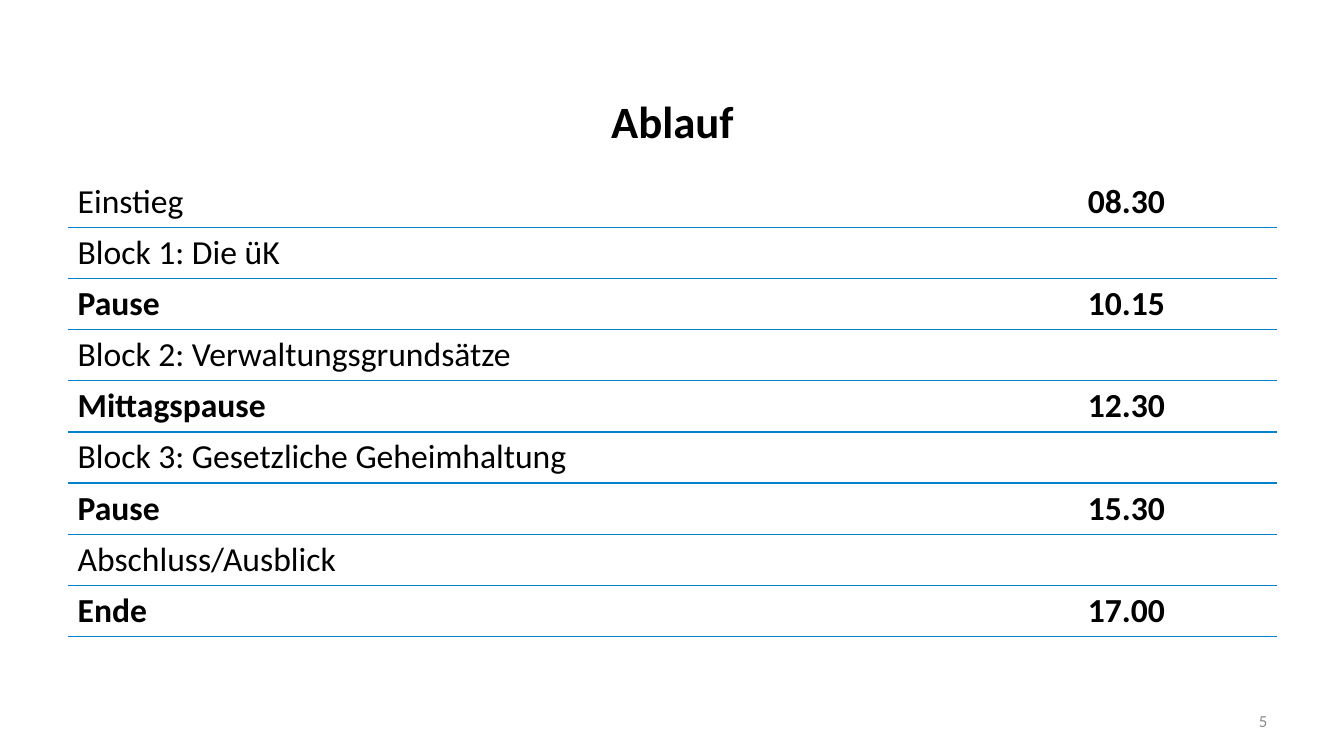
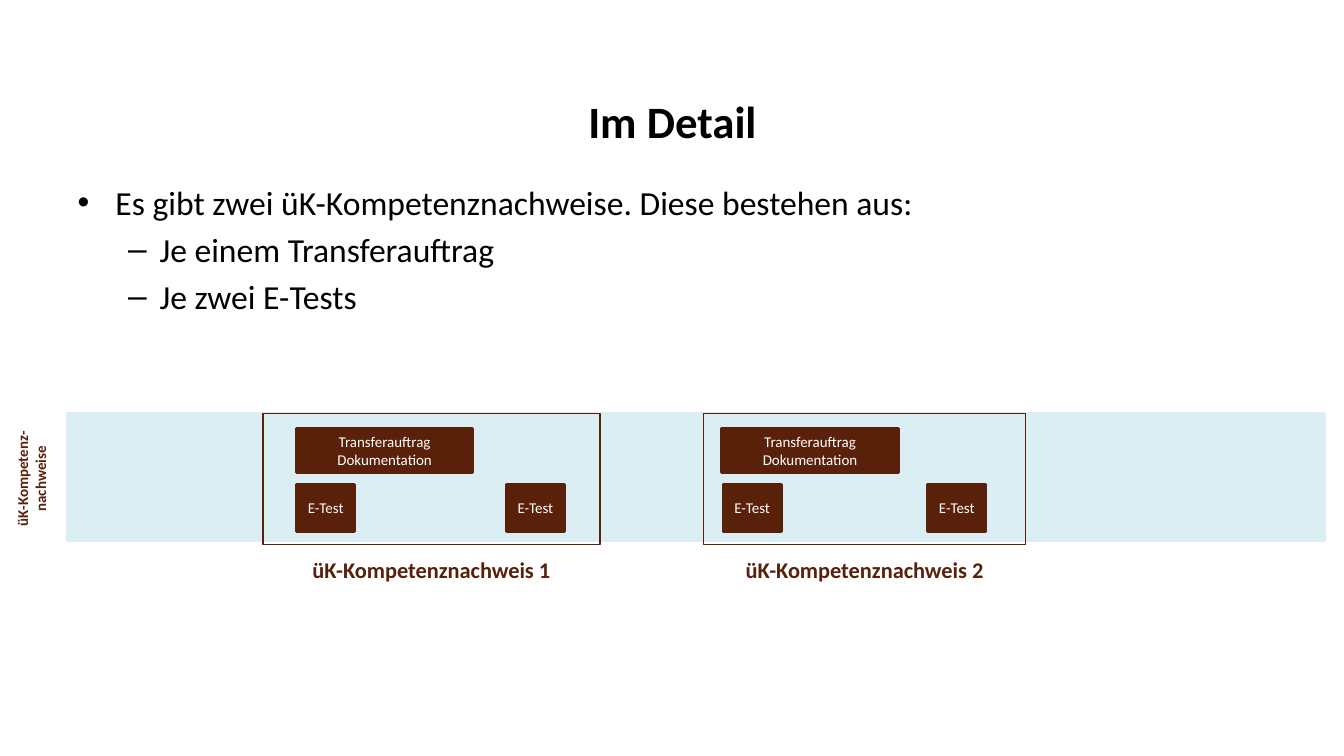
from lxml.etree import SubElement
from pptx import Presentation
from pptx.dml.color import RGBColor
from pptx.enum.shapes import MSO_SHAPE
from pptx.enum.text import MSO_ANCHOR, PP_ALIGN
from pptx.oxml.ns import qn
from pptx.util import Inches, Pt

BLACK = RGBColor(0x00, 0x00, 0x00)
WHITE = RGBColor(0xFF, 0xFF, 0xFF)
GREY = RGBColor(0x8C, 0x8C, 0x8C)
BLUE = RGBColor(0x00, 0x82, 0xCA)
PALE_BLUE = RGBColor(0xDB, 0xEE, 0xF4)
BROWN = RGBColor(0x59, 0x20, 0x0A)

FONT = "Calibri"
NO_STYLE_NO_GRID = "{2D5ABB26-0587-4C30-8999-92F81FD0307C}"
TITLE_AND_BODY, TITLE_ONLY = 1, 5
LEFT, CONTENT_TOP, WIDTH = 0.67, 1.75, 12
TEXT_SIZE, LABEL_SIZE = 24, 10.7


class Slides:
    """Holds the shared style and the slide being filled."""

    def __init__(self):
        self.deck = Presentation()
        self.deck.slide_width = Inches(13.33)
        self.deck.slide_height = Inches(7.5)
        self.page = None

    def style(self, para, size, color=BLACK, bold=False, align=None):
        font = para.font
        font.name, font.size, font.bold = FONT, Pt(size), bold
        font.color.rgb = color
        if align is not None:
            para.alignment = align

    def place(self, shape, left, top, width, height):
        shape.left, shape.top = Inches(left), Inches(top)
        shape.width, shape.height = Inches(width), Inches(height)

    def new_page(self, title, layout):
        self.page = self.deck.slides.add_slide(self.deck.slide_layouts[layout])
        box = self.page.shapes.title
        self.place(box, LEFT, 0.84, WIDTH, 0.71)
        box.text_frame.text = title
        box.text_frame.vertical_anchor = MSO_ANCHOR.MIDDLE
        self.style(box.text_frame.paragraphs[0], 32, bold=True, align=PP_ALIGN.CENTER)

    def bullets(self, items):
        body = self.page.placeholders[1]
        self.place(body, LEFT, CONTENT_TOP, WIDTH, 4.95)
        frame = body.text_frame
        frame.text = "\n".join(text for _, text in items)
        for para, (level, _) in zip(frame.paragraphs, items):
            para.level = level
            self.style(para, TEXT_SIZE)
        frame.paragraphs[0].space_before = Pt(0)

    def text(self, text, left, top, width, height, size, color,
             bold=False, align=PP_ALIGN.CENTER, upward=False):
        box = self.page.shapes.add_textbox(
            Inches(left), Inches(top), Inches(width), Inches(height))
        frame = box.text_frame
        frame.word_wrap = True
        frame.margin_left = frame.margin_right = 0
        frame.margin_top = frame.margin_bottom = 0
        frame.text = text
        if upward:
            frame._txBody.bodyPr.set("vert", "vert270")
        self.style(frame.paragraphs[0], size, color, bold, align)

    def page_number(self, number):
        self.text(str(number), 9.56, 7.05, 3.01, 0.2, 12, GREY, align=PP_ALIGN.RIGHT)

    def rectangle(self, left, top, width, height, fill, line, weight, text=""):
        box = self.page.shapes.add_shape(
            MSO_SHAPE.RECTANGLE,
            Inches(left), Inches(top), Inches(width), Inches(height))
        box.shadow.inherit = False
        box.line.color.rgb, box.line.width = line, Pt(weight)
        if fill is None:
            box.fill.background()
        else:
            box.fill.solid()
            box.fill.fore_color.rgb = fill
        if text:
            frame = box.text_frame
            frame.margin_left = frame.margin_right = Inches(0.05)
            frame.vertical_anchor = MSO_ANCHOR.MIDDLE
            frame.text = text
            for para in frame.paragraphs:
                self.style(para, LABEL_SIZE, WHITE, align=PP_ALIGN.CENTER)

    def underline(self, cell):
        border = SubElement(cell._tc.get_or_add_tcPr(), qn("a:lnB"), w=str(Pt(1)))
        fill = SubElement(border, qn("a:solidFill"))
        SubElement(fill, qn("a:srgbClr"), val=str(BLUE))

    def schedule(self, entries):
        row_height = 0.5
        table = self.page.shapes.add_table(
            len(entries), 2, Inches(LEFT), Inches(CONTENT_TOP),
            Inches(WIDTH), Inches(row_height * len(entries))).table
        table.first_row = table.horz_banding = False
        table._tbl.tblPr.find(qn("a:tableStyleId")).text = NO_STYLE_NO_GRID
        table.columns[0].width = Inches(10.02)
        table.columns[1].width = Inches(1.98)
        for row, (topic, time, bold) in zip(table.rows, entries):
            for cell, text, heavy in zip(row.cells, (topic, time), (bold, True)):
                cell.text = text
                self.style(cell.text_frame.paragraphs[0], TEXT_SIZE, bold=heavy)
                self.underline(cell)
                cell.fill.background()

    def certificate(self, caption, left, width, transfer_left, test_lefts):
        """Frame with one transfer task, its tests and a caption below."""
        self.rectangle(left, 4.1, width, 1.3, None, BROWN, 1)
        self.rectangle(transfer_left, 4.25, 1.75, 0.44, BROWN, BROWN, 2,
                       "Transferauftrag\nDokumentation")
        for test_left in test_lefts:
            self.rectangle(test_left, 4.81, 0.58, 0.46, BROWN, BROWN, 2, "E-Test")
        self.text(caption, left, 5.52, width, 0.23, 16, BROWN, bold=True)


def main():
    slides = Slides()

    # Schedule of the day
    slides.new_page("Ablauf", TITLE_ONLY)
    slides.schedule([
        ("Einstieg", "08.30", False),
        ("Block 1: Die üK", "", False),
        ("Pause", "10.15", True),
        ("Block 2: Verwaltungsgrundsätze", "", False),
        ("Mittagspause", "12.30", True),
        ("Block 3: Gesetzliche Geheimhaltung", "", False),
        ("Pause", "15.30", True),
        ("Abschluss/Ausblick", "", False),
        ("Ende", "17.00", True),
    ])
    slides.page_number(5)

    # Certificates: list, then timeline band
    slides.new_page("Im Detail", TITLE_AND_BODY)
    slides.bullets([
        (0, "Es gibt zwei üK-Kompetenznachweise. Diese bestehen aus:"),
        (1, "Je einem Transferauftrag"),
        (1, "Je zwei E-Tests"),
    ])
    slides.rectangle(LEFT, 4.1, 12.47, 1.26, PALE_BLUE, PALE_BLUE, 2)
    slides.text("üK-Kompetenz-nachweise", 0.13, 4.07, 0.31, 1.36,
                LABEL_SIZE, BROWN, bold=True, upward=True)
    slides.certificate("üK-Kompetenznachweis 1", 2.61, 3.34, 2.94, (2.94, 5.02))
    slides.certificate("üK-Kompetenznachweis 2", 6.98, 3.19, 7.16, (7.17, 9.2))

    slides.deck.save("out.pptx")


if __name__ == "__main__":
    main()
